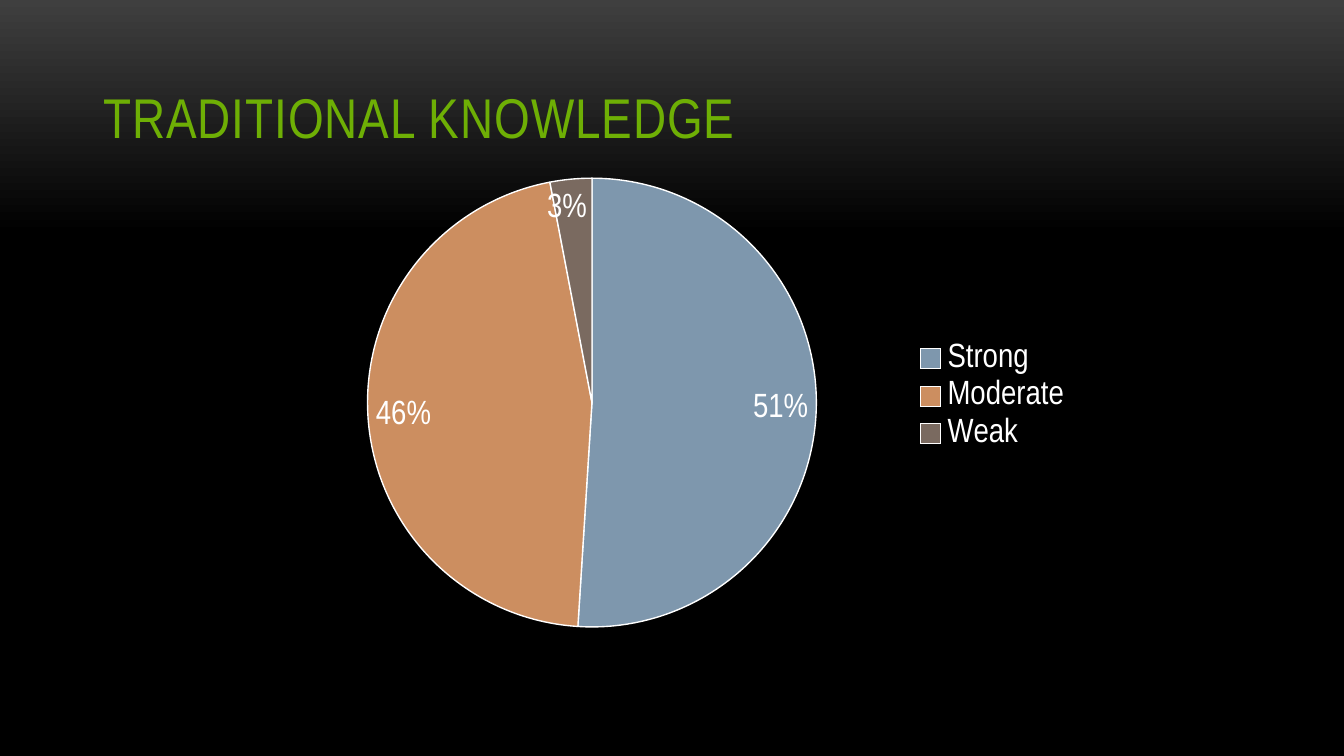
from dataclasses import dataclass

from lxml import etree
from pptx import Presentation
from pptx import util as u
from pptx.chart.data import CategoryChartData
from pptx.dml.color import RGBColor
from pptx.enum import chart as charts, text
from pptx.oxml import ns

FONT = "Arial Narrow"
WHITE = "FFFFFF"


@dataclass
class Slice:
    name: str
    value: float
    color: str


@dataclass
class Frame:
    left: float
    top: float
    width: float
    height: float

    def lengths(self) -> tuple:
        return tuple(u.Cm(n) for n in (self.left, self.top, self.width, self.height))


SLICES = [
    Slice("Strong", 51, "7E97AD"),
    Slice("Moderate", 46, "CC8E60"),
    Slice("Weak", 3, "7A6A60"),
]
TITLE_FRAME = Frame(1.7, 0.56, 22.02, 2.39)
CHART_FRAME = Frame(5.09, 1.43, 15.44, 12.12)
PLOT_LAYOUT = {
    "layoutTarget": "inner", "xMode": "edge", "yMode": "edge",
    "x": 0.11, "y": 0.16, "w": 0.57, "h": 0.7,
}
WEAK_LABEL_SHIFT = {"x": -0.03, "y": 0.01}


def rgb(value: str) -> RGBColor:
    return RGBColor.from_string(value)


def style_font(font, size: float, color: str) -> None:
    font.name = FONT
    font.size = u.Pt(size)
    font.color.rgb = rgb(color)


def paint_background(page) -> None:
    fill = page.background.fill
    fill.gradient()
    fill.gradient_angle = 270
    for stop, (position, color) in zip(fill.gradient_stops, [(0, "3F3F3F"), (0.31, "000000")]):
        stop.position = position
        stop.color.rgb = rgb(color)


def write_title(page, words: str, frame: Frame) -> None:
    title = page.shapes.title
    title.left, title.top, title.width, title.height = frame.lengths()
    box = title.text_frame
    box.word_wrap = True
    box.auto_size = text.MSO_AUTO_SIZE.NONE
    box.vertical_anchor = text.MSO_ANCHOR.BOTTOM
    para = box.paragraphs[0]
    para.alignment = text.PP_ALIGN.LEFT
    span = para.add_run()
    span.text = words
    style_font(span.font, 30, "6EAF05")
    span._r.get_or_add_rPr().set("spc", "50")


def set_layout(parent, index: int, settings: dict) -> None:
    for old in parent.findall(ns.qn("c:layout")):
        parent.remove(old)
    holder = etree.Element(ns.qn("c:layout"))
    manual = etree.SubElement(holder, ns.qn("c:manualLayout"))
    for key, value in settings.items():
        etree.SubElement(manual, ns.qn(f"c:{key}")).set("val", str(value))
    parent.insert(index, holder)


def shift_label(series, index: int, shift: dict[str, float]) -> None:
    label = series.points[index].data_label
    label.position = charts.XL_LABEL_POSITION.INSIDE_END
    style_font(label.font, 18, WHITE)
    element = series.data_labels._element.find(ns.qn("c:dLbl"))
    element.find(ns.qn("c:showVal")).set("val", "0")
    element.find(ns.qn("c:showPercent")).set("val", "1")
    set_layout(element, 1, shift)
    number = etree.Element(ns.qn("c:numFmt"), formatCode="0%", sourceLinked="0")
    element.insert(2, number)


def draw_pie(page, slices: list[Slice], frame: Frame) -> None:
    data = CategoryChartData()
    data.categories = [part.name for part in slices]
    data.add_series("Series 1", [part.value for part in slices])
    chart = page.shapes.add_chart(charts.XL_CHART_TYPE.PIE, *frame.lengths(), data).chart
    style_font(chart.font, 18, WHITE)
    chart.has_title = False
    chart.has_legend = True
    chart.legend.position = charts.XL_LEGEND_POSITION.RIGHT
    chart.legend.include_in_layout = False
    style_font(chart.legend.font, 18, WHITE)

    plot = chart.plots[0]
    plot.vary_by_categories = True
    series = plot.series[0]
    for index, part in enumerate(slices):
        shape_format = series.points[index].format
        shape_format.fill.solid()
        shape_format.fill.fore_color.rgb = rgb(part.color)
        shape_format.line.color.rgb = rgb(WHITE)
        shape_format.line.width = u.Pt(0.75)

    labels = series.data_labels
    labels.show_value = False
    labels.show_percentage = True
    labels.number_format = "0%"
    labels.number_format_is_linked = False
    labels.position = charts.XL_LABEL_POSITION.INSIDE_END
    style_font(labels.font, 18, WHITE)
    shift_label(series, len(slices) - 1, WEAK_LABEL_SHIFT)
    set_layout(chart._chartSpace.chart.plotArea, 0, PLOT_LAYOUT)


def main() -> None:
    deck = Presentation()
    deck.slide_width, deck.slide_height = u.Cm(25.4), u.Cm(14.29)
    page = deck.slides.add_slide(deck.slide_layouts[5])
    paint_background(page)
    write_title(page, "TRADITIONAL KNOWLEDGE", TITLE_FRAME)
    draw_pie(page, SLICES, CHART_FRAME)
    deck.save("out.pptx")


if __name__ == "__main__":
    main()
